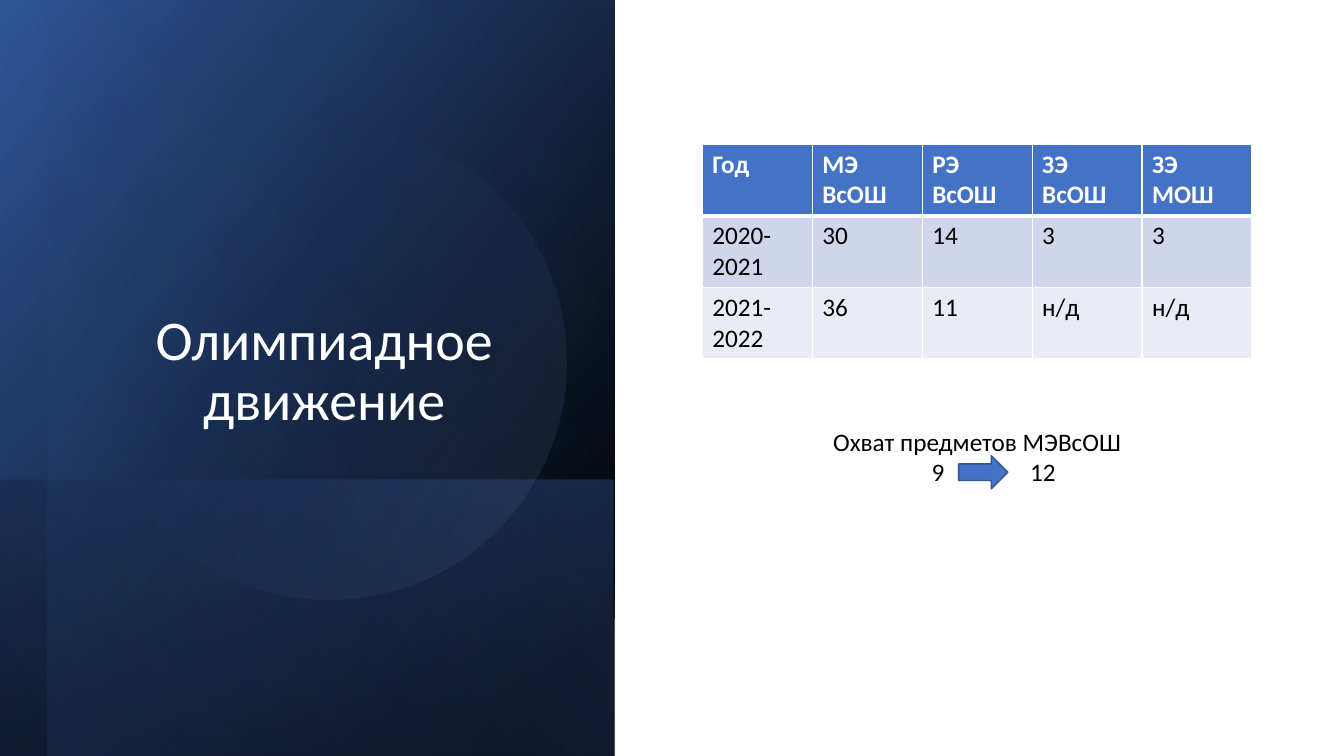
from lxml import etree
from pptx import Presentation
from pptx.dml.color import RGBColor
from pptx.enum.shapes import MSO_SHAPE
from pptx.enum.text import MSO_ANCHOR, PP_ALIGN
from pptx.oxml.ns import qn
from pptx.util import Cm, Pt

RECT, OVAL, ARROW = MSO_SHAPE.RECTANGLE, MSO_SHAPE.OVAL, MSO_SHAPE.RIGHT_ARROW
CENTER, LEFT = PP_ALIGN.CENTER, PP_ALIGN.LEFT
TOP, BOTTOM = MSO_ANCHOR.TOP, MSO_ANCHOR.BOTTOM
FONT = "Calibri"
COLORS = {
    "white": "FFFFFF", "black": "000000", "blue": "4472C4", "navy": "2F5597",
    "light": "8FAADC", "edge": "325491", "band1": "CFD5EA", "band2": "E9EBF5",
}

TITLE = "Олимпиадное движение"
ROWS = [
    ("Год", "МЭ ВсОШ", "РЭ ВсОШ", "ЗЭ ВсОШ", "ЗЭ МОШ"),
    ("2020-2021", "30", "14", "3", "3"),
    ("2021-2022", "36", "11", "н/д", "н/д"),
]
ROW_FILLS = ["blue", "band1", "band2"]
COVERAGE = "Охват предметов МЭВсОШ"
COVERAGE_CHANGE = ("9", "12")
COVERAGE_TABS = (2.74, 5.38)

# kind, box, rotation, flipped, gradient angle, stops (position, color, opacity)
PANELS = [
    (RECT, (-1.78, 1.78, 19.05, 15.49), 90, True, 50,
     [(8, "black", 100), (100, "navy", 100)]),
    (RECT, (4.24, 7.82, 6.96, 15.49), 90, True, 130,
     [(2, "blue", 29), (100, "black", 30)]),
    (RECT, (-1.17, 2.36, 19.05, 14.3), 90, True, 130,
     [(0, "black", 0), (99, "blue", 11)]),
    (OVAL, (2.29, 3.12, 11.99, 11.99), 101.6, False, 290,
     [(39, "blue", 0), (100, "light", 15)]),
]


def rgb(name):
    return RGBColor.from_string(COLORS[name])


def place(box):
    return [Cm(v) for v in box]


def add_run(p, text, size, color, bold=False):
    r = p.add_run()
    r.text = text
    r.font.name, r.font.size, r.font.bold = FONT, Pt(size), bold
    r.font.color.rgb = rgb(color)


def add_panel(s, kind, box, rotation, flipped, angle, stops):
    sp = s.shapes.add_shape(kind, *place(box))
    sp.shadow.inherit = False
    sp.line.fill.background()
    sp.rotation = rotation
    if flipped:
        sp._element.spPr.find(qn("a:xfrm")).set("flipH", "1")
    sp.fill.gradient()
    sp.fill.gradient_angle = 360 - angle
    for stop, (position, color, opacity) in zip(sp.fill.gradient_stops, stops):
        stop.position = position / 100
        stop.color.rgb = rgb(color)
    for node, (_, _, opacity) in zip(sp._element.spPr.iter(qn("a:srgbClr")), stops):
        if opacity < 100:
            etree.SubElement(node, qn("a:alpha")).set("val", str(opacity * 1000))


def add_borders(cell, bottom):
    tcPr = cell._tc.get_or_add_tcPr()
    for i, (side, width) in enumerate(zip("LRTB", (1, 1, 1, bottom))):
        ln = etree.Element(qn("a:ln" + side), w=str(Pt(width)))
        fill = etree.SubElement(ln, qn("a:solidFill"))
        etree.SubElement(fill, qn("a:srgbClr")).set("val", COLORS["white"])
        tcPr.insert(i, ln)


def add_results(s):
    table = s.shapes.add_table(len(ROWS), len(ROWS[0]),
                               *place((17.7, 3.63, 13.85, 5.4))).table
    for column in table.columns:
        column.width = Cm(2.77)
    for i, (values, fill) in enumerate(zip(ROWS, ROW_FILLS)):
        table.rows[i].height = Cm(1.8)
        header = i == 0
        for cell, value in zip(table.rows[i].cells, values):
            cell.fill.solid()
            cell.fill.fore_color.rgb = rgb(fill)
            add_run(cell.text_frame.paragraphs[0], value, 18,
                    "white" if header else "black", header)
            add_borders(cell, 3 if i == 0 else 1)
            if i == 1:
                cell._tc.tcPr.find(qn("a:lnT")).set("w", str(Pt(3)))


def add_coverage(s):
    tf = s.shapes.add_textbox(*place((20.65, 10.62, 7.95, 2.57))).text_frame
    tf.word_wrap = True
    tf.vertical_anchor = TOP
    p = tf.paragraphs[0]
    p.alignment = CENTER
    add_run(p, COVERAGE, 18, "black")
    p = tf.add_paragraph()
    p.alignment = LEFT
    tabs = etree.SubElement(p._p.get_or_add_pPr(), qn("a:tabLst"))
    for value, stop in zip(COVERAGE_CHANGE, COVERAGE_TABS):
        etree.SubElement(tabs, qn("a:tab"), pos=str(Cm(stop)), algn="ctr")
        add_run(p, "\t" + value, 18, "black")
    sp = s.shapes.add_shape(ARROW, *place((24.16, 11.48, 1.24, 0.84)))
    sp.shadow.inherit = False
    sp.fill.solid()
    sp.fill.fore_color.rgb = rgb("blue")
    sp.line.color.rgb = rgb("edge")
    sp.line.width = Pt(1)


def add_title(s):
    sp = s.shapes.title
    s.shapes._spTree.append(sp._element)
    sp.left, sp.top, sp.width, sp.height = place((2.29, 1.63, 11.76, 9.4))
    tf = sp.text_frame
    tf.word_wrap = True
    tf.vertical_anchor = BOTTOM
    p = tf.paragraphs[0]
    p.alignment = CENTER
    p.line_spacing = 0.9
    add_run(p, TITLE, 40, "white")


def main():
    prs = Presentation()
    prs.slide_width, prs.slide_height = Cm(33.87), Cm(19.05)
    s = prs.slides.add_slide(prs.slide_layouts[5])
    s.background.fill.solid()
    s.background.fill.fore_color.rgb = rgb("white")
    for panel in PANELS:
        add_panel(s, *panel)
    add_title(s)
    add_results(s)
    add_coverage(s)
    prs.save("out.pptx")


if __name__ == "__main__":
    main()
